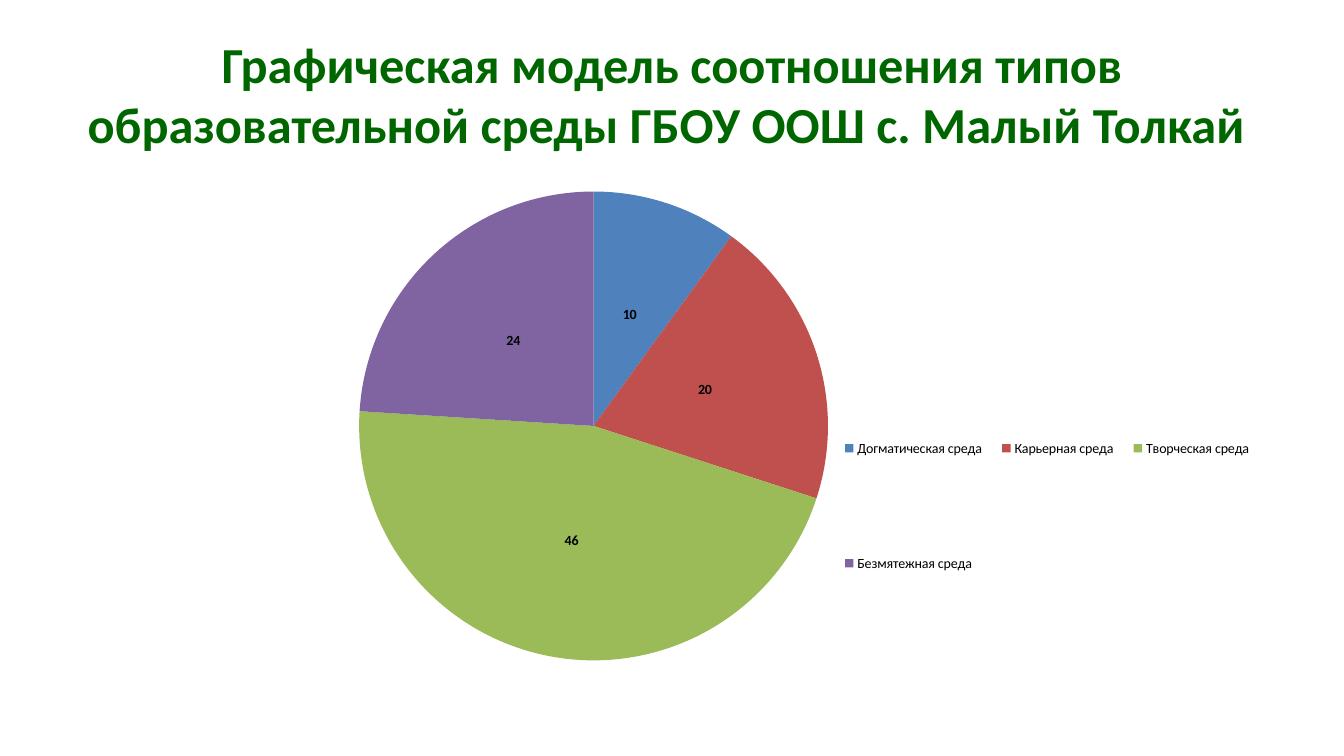
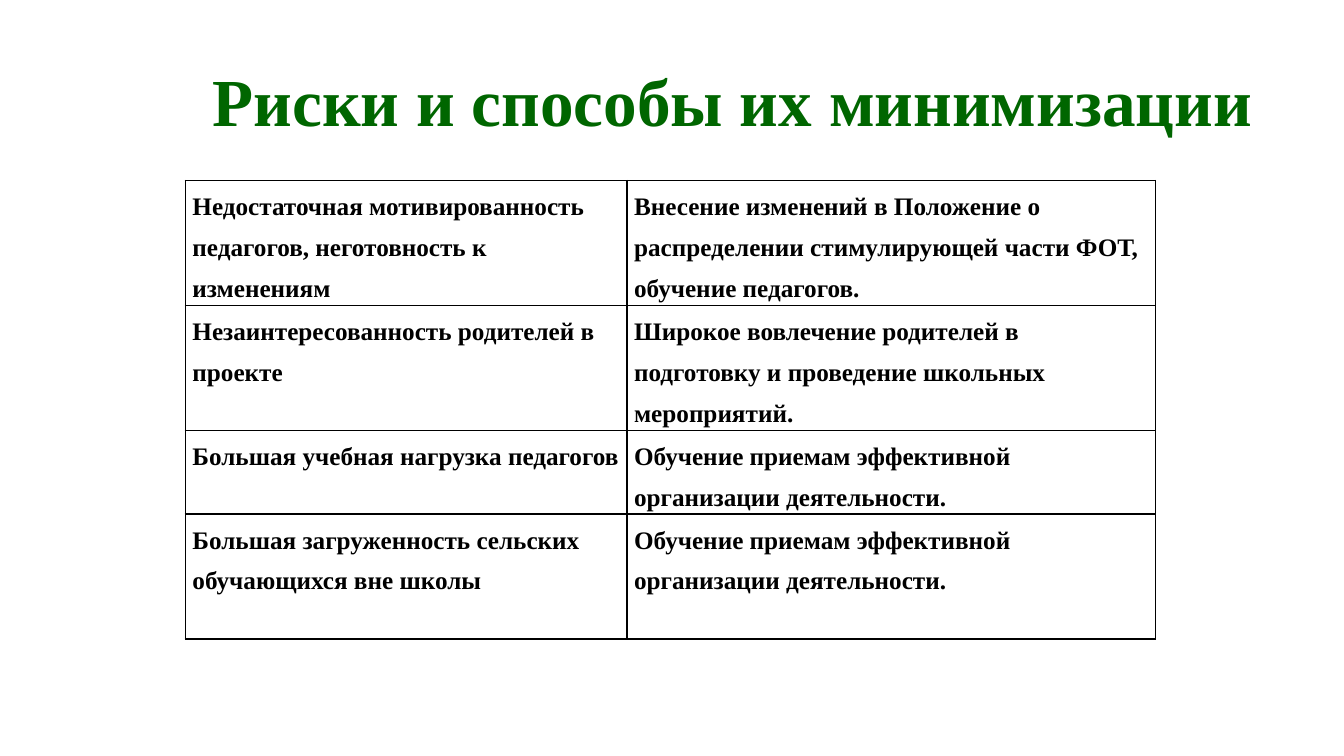
"""Build two slides: a pie chart of school environment types and a table of risks."""
from lxml import etree
from pptx import Presentation
from pptx.chart.data import CategoryChartData
from pptx.dml.color import RGBColor
from pptx.enum import chart as ch, text
from pptx.oxml.ns import qn
from pptx.util import Cm, Pt

GREEN = RGBColor(0x00, 0x66, 0x00)
BLACK = RGBColor(0, 0, 0)
SANS, SERIF = "Calibri", "Times New Roman"

MODEL_TITLE = "Графическая модель соотношения типов образовательной среды ГБОУ ООШ с. Малый Толкай "
ENVIRONMENTS = [
    ("Догматическая среда", 10, RGBColor(0x4F, 0x81, 0xBD)),
    ("Карьерная среда", 20, RGBColor(0xC0, 0x50, 0x4D)),
    ("Творческая среда", 46, RGBColor(0x9B, 0xBB, 0x59)),
    ("Безмятежная среда", 24, RGBColor(0x80, 0x64, 0xA2)),
]
PIE_AREA = {"x": 0.24, "y": 0.03, "w": 0.39, "h": 0.94}
LEGEND_AREA = {"x": 0.63, "y": 0.33, "w": 0.36, "h": 0.66}

RISKS_TITLE = "Риски и способы их минимизации"
RISKS = [
    ("Недостаточная мотивированность педагогов, неготовность к изменениям",
     "Внесение изменений в Положение о распределении стимулирующей части ФОТ, обучение педагогов."),
    ("Незаинтересованность родителей в проекте",
     "Широкое вовлечение родителей в подготовку и проведение школьных мероприятий."),
    ("Большая учебная нагрузка педагогов",
     "Обучение приемам эффективной организации деятельности."),
    ("Большая загруженность сельских обучающихся вне школы",
     "Обучение приемам эффективной организации деятельности."),
]
RISK_COLUMNS = [Cm(11.13), Cm(13.31)]
RISK_ROWS = [Cm(3.15), Cm(3.15), Cm(2.1), Cm(3.15)]

MARGIN, CONTENT_WIDTH = Cm(1.7), Cm(30.48)


def style_font(font, name, size, color, bold=False):
    font.name, font.size, font.bold = name, Pt(size), bold
    font.color.rgb = color


def add_titled_slide(deck, wording, font_name, size):
    slide = deck.slides.add_slide(deck.slide_layouts[5])
    title = slide.shapes.title
    title.left, title.top, title.width, title.height = MARGIN, Cm(0.76), CONTENT_WIDTH, Cm(3.18)
    frame = title.text_frame
    frame.text = wording
    frame.auto_size = text.MSO_AUTO_SIZE.NONE
    frame.vertical_anchor = text.MSO_ANCHOR.MIDDLE
    heading = frame.paragraphs[0]
    heading.alignment = text.PP_ALIGN.CENTER
    style_font(heading.runs[0].font, font_name, size, GREEN, True)
    return slide, heading


def set_layout(owner, position, area, inner=False):
    for old in owner.findall(qn("c:layout")):
        owner.remove(old)
    layout = etree.Element(qn("c:layout"))
    manual = etree.SubElement(layout, qn("c:manualLayout"))
    settings = {"layoutTarget": "inner"} if inner else {}
    settings |= {"xMode": "edge", "yMode": "edge"} | area
    for tag, value in settings.items():
        etree.SubElement(manual, qn(f"c:{tag}")).set("val", str(value))
    owner.insert(position, layout)


def add_environment_pie(slide):
    names, shares, colors = zip(*ENVIRONMENTS)
    data = CategoryChartData(number_format="0")
    data.categories = names
    data.add_series("Series 1", shares)
    pie = slide.shapes.add_chart(ch.XL_CHART_TYPE.PIE, MARGIN, Cm(4.45),
                                 CONTENT_WIDTH, Cm(12.57), data).chart
    style_font(pie.font, SANS, 10, BLACK)
    pie.has_title = False
    pie.has_legend = True
    pie.legend.position = ch.XL_LEGEND_POSITION.RIGHT
    pie.legend.include_in_layout = False
    style_font(pie.legend.font, SANS, 10, BLACK)

    plot = pie.plots[0]
    plot.vary_by_categories = True
    for index, color in enumerate(colors):
        fill = plot.series[0].points[index].format.fill
        fill.solid()
        fill.fore_color.rgb = color
    plot.has_data_labels = True
    labels = plot.data_labels
    labels.show_value = True
    labels.number_format, labels.number_format_is_linked = "0", False
    labels.position = ch.XL_LABEL_POSITION.CENTER
    style_font(labels.font, SANS, 10, BLACK, True)

    set_layout(pie.element.find(".//" + qn("c:plotArea")), 0, PIE_AREA, inner=True)
    set_layout(pie.element.find(".//" + qn("c:legend")), 1, LEGEND_AREA)


def add_borders(cell):
    properties = cell._tc.get_or_add_tcPr()
    for index, side in enumerate(("lnL", "lnR", "lnT", "lnB")):
        line = etree.Element(qn(f"a:{side}"), w=str(Pt(1)))
        solid = etree.SubElement(line, qn("a:solidFill"))
        etree.SubElement(solid, qn("a:srgbClr")).set("val", str(BLACK))
        properties.insert(index, line)


def add_risk_table(slide):
    table = slide.shapes.add_table(len(RISKS), len(RISK_COLUMNS), Cm(4.67), Cm(4.55),
                                   sum(RISK_COLUMNS), sum(RISK_ROWS)).table
    table.first_row = table.horz_banding = False
    for column, width in zip(table.columns, RISK_COLUMNS):
        column.width = width
    for row, height, entries in zip(table.rows, RISK_ROWS, RISKS):
        row.height = height
        for cell, wording in zip(row.cells, entries):
            cell.text = wording
            cell.margin_left = cell.margin_right = Cm(0.18)
            cell.margin_top = cell.margin_bottom = 0
            cell.fill.background()
            add_borders(cell)
            paragraph = cell.text_frame.paragraphs[0]
            paragraph.line_spacing = 1.46
            paragraph.space_before = Pt(6.8)
            style_font(paragraph.runs[0].font, SERIF, 18, BLACK, True)


def main():
    deck = Presentation()
    deck.slide_width, deck.slide_height = Cm(33.87), Cm(19.05)

    model_slide, _ = add_titled_slide(deck, MODEL_TITLE, SANS, 36)
    add_environment_pie(model_slide)

    risk_slide, heading = add_titled_slide(deck, RISKS_TITLE, SERIF, 48)
    heading.line_spacing = 1.15
    heading.space_before = Pt(12.9)
    indent = heading._p.get_or_add_pPr()
    indent.set("marL", str(Cm(3.05)))
    indent.set("indent", "0")
    add_risk_table(risk_slide)

    deck.save("out.pptx")


if __name__ == "__main__":
    main()
